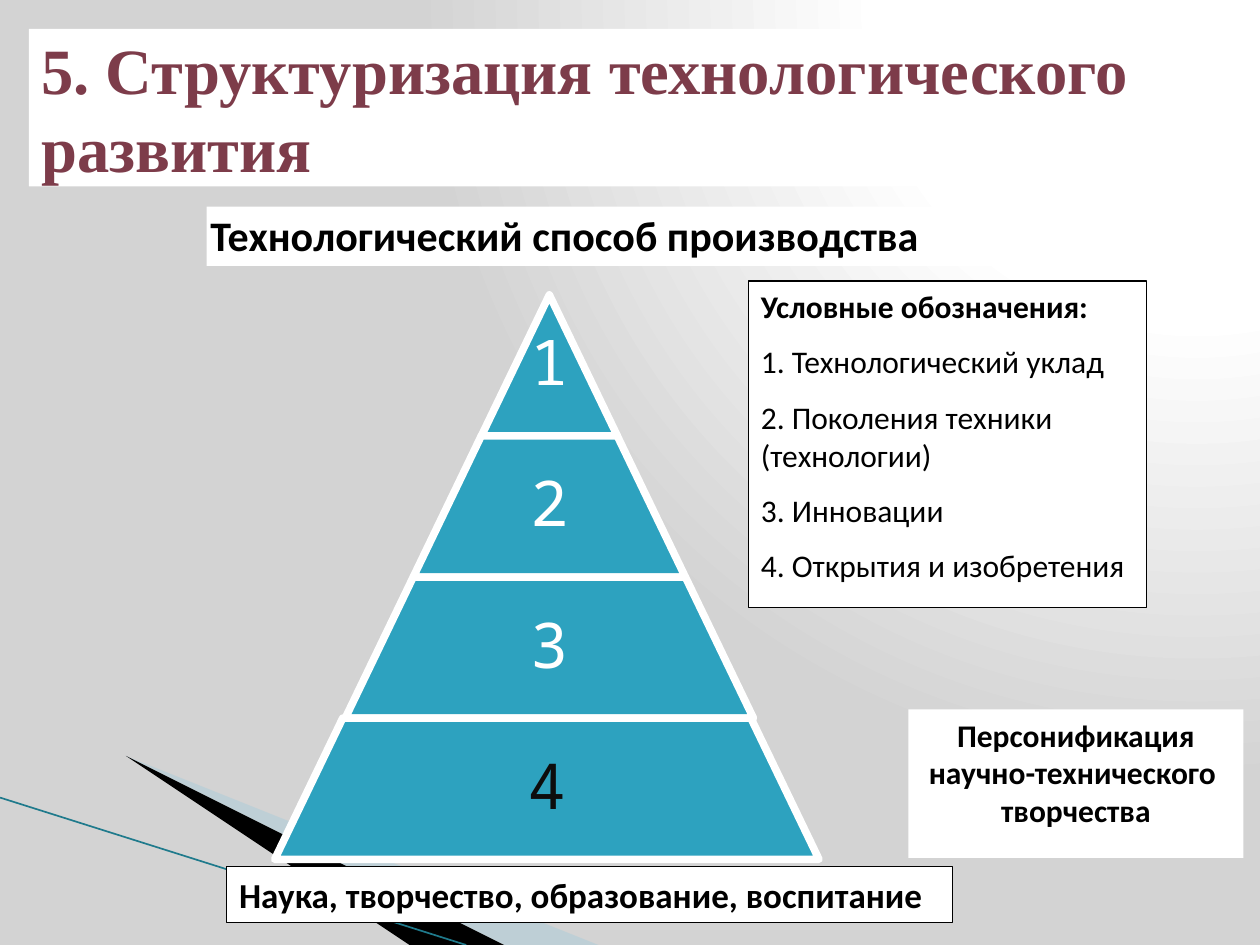
from pptx import Presentation, oxml, util as u
from pptx.dml.color import RGBColor
from pptx.enum import shapes, text
from pptx.oxml import ns

W, H = 10, 7.5
WHITE, BLACK, TEAL = "FFFFFF", "000000", "2DA2BF"
SANS, MONO, SERIF = "Calibri", "Noto Sans Mono", "Times New Roman"


def paint(sp, fill=None, line=None, width=0.75):
    sp.shadow.inherit = False
    if fill:
        sp.fill.solid()
        sp.fill.fore_color.rgb = RGBColor.from_string(fill)
    if line:
        sp.line.color.rgb = RGBColor.from_string(line)
        sp.line.width = u.Pt(width)
    else:
        sp.line.fill.background()


def add_text(lines, box, size, font=SANS, color=BLACK, bold=True, align="LEFT", anchor="TOP",
             after=0, spacing=1.0, inset=(0.1, 0.05), fill=None, line=None):
    """Add a text box; bold may be "first" to embolden only the first line."""
    sp = s.shapes.add_textbox(*map(u.Inches, box))
    paint(sp, fill, line)
    tf = sp.text_frame
    tf.word_wrap = True
    tf.vertical_anchor = text.MSO_ANCHOR[anchor]
    tf.margin_left = tf.margin_right = u.Inches(inset[0])
    tf.margin_top = tf.margin_bottom = u.Inches(inset[1])
    for i, words in enumerate(lines):
        p = tf.paragraphs[0] if i == 0 else tf.add_paragraph()
        p.alignment = text.PP_ALIGN[align]
        p.space_after = u.Pt(after)
        p.line_spacing = spacing
        r = p.add_run()
        r.text = words
        r.font.size, r.font.name = u.Pt(size), font
        r.font.bold = i == 0 if bold == "first" else bold
        r.font.color.rgb = RGBColor.from_string(color)


prs = Presentation()
prs.slide_width, prs.slide_height = u.Inches(W), u.Inches(H)
s = prs.slides.add_slide(prs.slide_layouts[6])

# Background: radial gradient centred above the top right corner
stops = "".join(f'<a:gs pos="{pos}000"><a:srgbClr val="{c}"/></a:gs>'
                for pos, c in [(0, WHITE), (40, WHITE), (100, "D3D3D3")])
s.element.cSld.insert(0, oxml.parse_xml(
    f'<p:bg {ns.nsdecls("p", "a")}><p:bgPr><a:gradFill><a:gsLst>{stops}</a:gsLst>'
    '<a:path path="circle"><a:fillToRect l="95000" t="-106000" r="5000" b="206000"/></a:path>'
    '</a:gradFill><a:effectLst/></p:bgPr></p:bg>'))

# Corner wedges and the thin line below them
for color, alpha, points in [
    ("A0CBDC", 40, [(0.55, 6.5), (5.95, H), (4.56, H)]),
    (BLACK, 100, [(0.53, 6.49), (4.57, H), (3.72, H)]),
]:
    fb = s.shapes.build_freeform(*points[0], scale=u.Inches(1))
    fb.add_line_segments(points[1:])
    sp = fb.convert_to_shape()
    paint(sp, color)
    if alpha < 100:
        rgb = sp.element.spPr.find(ns.qn("a:solidFill"))[0]
        rgb.append(oxml.parse_xml(f'<a:alpha {ns.nsdecls("a")} val="{alpha}000"/>'))
cn = s.shapes.add_connector(shapes.MSO_CONNECTOR.STRAIGHT,
                            *map(u.Inches, (0, 6.33, 3.7, H)))
cn.line.color.rgb = RGBColor.from_string("1F7A8C")
cn.line.width = u.Pt(0.95)
cn.element.spPr.append(oxml.parse_xml(f'<a:effectLst {ns.nsdecls("a")}/>'))

add_text(["5. Структуризация технологического развития"], (0.23, 0.23, W - 0.23, 1.25), 36.9,
         font=SERIF, color="7D3C4A", anchor="MIDDLE", fill=WHITE)

# Pyramid: each tier is one step wider than the tier above
STEP, TIER, TOP = 1.08, 1.12, 2.34
for n in range(1, 5):
    base = n == 4
    centre = 4.34 if base else 4.36
    width, top = n * STEP, TOP + (n - 1) * TIER
    sp = s.shapes.add_shape(shapes.MSO_SHAPE.TRAPEZOID,
                            *map(u.Inches, (centre - width / 2, top, width, TIER)))
    sp.adjustments[0] = STEP / 2 / min(width, TIER)
    paint(sp, TEAL, WHITE, 4.33)
    label = max(STEP, 0.65 * width)
    add_text([str(n)], (centre - label / 2, top, label, TIER), 36, font=MONO, bold=False,
             color="0D0D0D" if base else WHITE, align="CENTER", anchor="MIDDLE",
             spacing=0.9, inset=(0.05, 0.05))

add_text(["Условные обозначения:", "1. Технологический уклад", "2. Поколения техники (технологии)",
          "3. Инновации", "4. Открытия и изобретения"], (5.94, 2.23, 3.16, 2.59), 18,
         bold="first", after=10, fill=WHITE, line=BLACK)
add_text(["Персонификация", "научно-технического ", "творчества"], (7.21, 5.63, 2.66, 1.18), 18,
         align="CENTER", fill=WHITE)
add_text(["Наука, творчество, образование, воспитание"], (1.8, 6.88, 5.76, 0.44), 20,
         after=10, fill=WHITE, line=BLACK)
add_text(["Технологический способ производства"], (1.64, 1.64, 7.33, 0.47), 24,
         after=10, inset=(0.03, 0.02), fill=WHITE)

prs.save("out.pptx")
